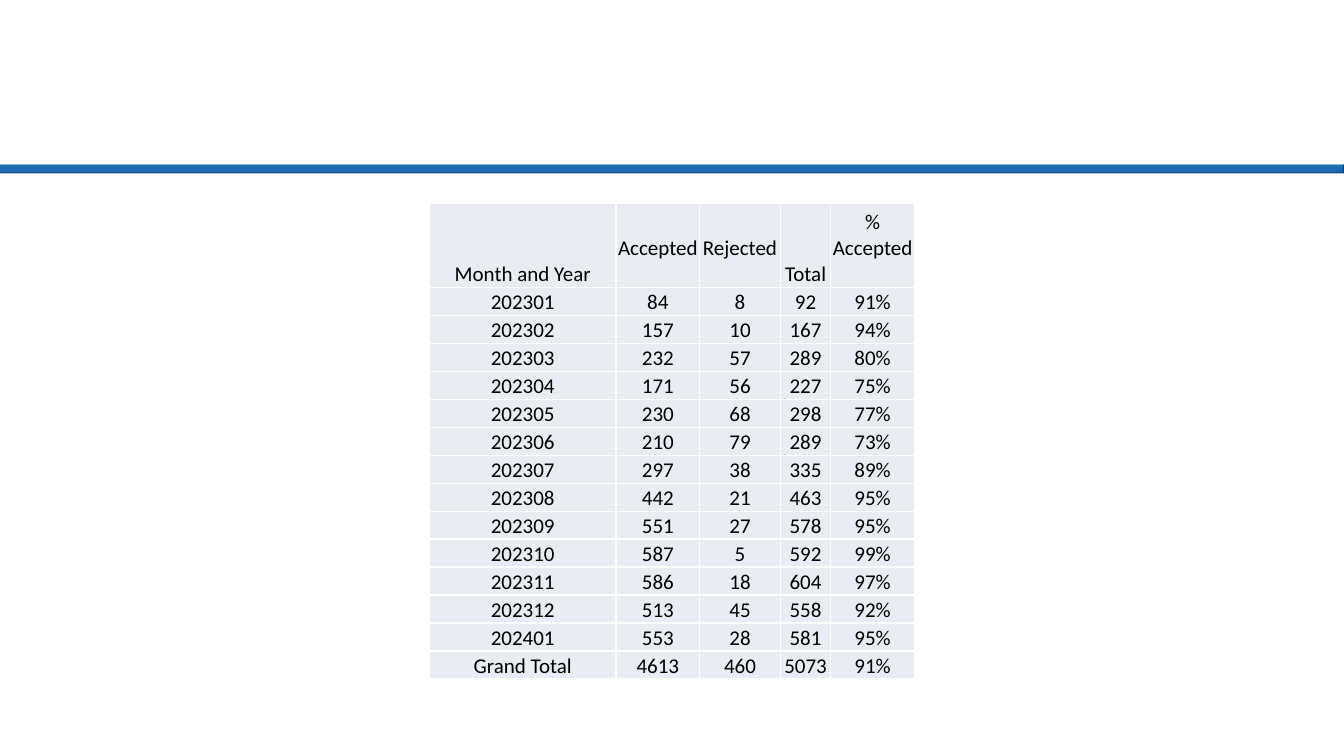
from dataclasses import dataclass

from lxml.etree import SubElement
from pptx import Presentation
from pptx.dml.color import RGBColor
from pptx.enum.shapes import MSO_SHAPE as SHAPE
from pptx.enum.text import MSO_ANCHOR as ANCHOR, PP_ALIGN as ALIGN
from pptx.oxml.ns import qn
from pptx.util import Inches, Pt


@dataclass(frozen=True)
class Theme:
    font: str = "Calibri"
    size: int = 15
    text: str = "000000"
    bar: str = "1B69B0"
    cell: str = "E9EBF5"
    border: str = "FFFFFF"
    border_width: int = 1


HEADERS = ["Month and Year", "Accepted", "Rejected", "Total", "% Accepted"]
RAISED_HEADERS = {"Accepted", "Rejected", "% Accepted"}
COL_WIDTHS = [1.85, 0.83, 0.8, 0.5, 0.83]
TABLE_HEIGHT = 4.72
HEADER_HEIGHT = 0.83
LINE_HEIGHT = 0.26
ROWS = [
    ("202301", 84, 8, 92, "91%"),
    ("202302", 157, 10, 167, "94%"),
    ("202303", 232, 57, 289, "80%"),
    ("202304", 171, 56, 227, "75%"),
    ("202305", 230, 68, 298, "77%"),
    ("202306", 210, 79, 289, "73%"),
    ("202307", 297, 38, 335, "89%"),
    ("202308", 442, 21, 463, "95%"),
    ("202309", 551, 27, 578, "95%"),
    ("202310", 587, 5, 592, "99%"),
    ("202311", 586, 18, 604, "97%"),
    ("202312", 513, 45, 558, "92%"),
    ("202401", 553, 28, 581, "95%"),
    ("Grand Total", 4613, 460, 5073, "91%"),
]


class SlideBuilder:
    """Adds styled elements to one slide."""

    def __init__(self, slide, theme):
        self.slide = slide
        self.theme = theme

    def bar(self, left, top, width, height):
        sp = self.slide.shapes.add_shape(
            SHAPE.BEVEL, Inches(left), Inches(top), Inches(width), Inches(height))
        sp.shadow.inherit = False
        sp.fill.solid()
        sp.fill.fore_color.rgb = RGBColor.from_string(self.theme.bar)
        sp.line.fill.background()

    def table(self, left, top, height, widths, header_height, rows):
        frame = self.slide.shapes.add_table(
            len(rows), len(widths), Inches(left), Inches(top),
            Inches(sum(widths)), Inches(height))
        table = frame.table
        table.first_row = table.horz_banding = False
        for column, width in zip(table.columns, widths):
            column.width = Inches(width)
        row_height = (height - header_height) / (len(rows) - 1)
        for i, (row, values) in enumerate(zip(table.rows, rows)):
            row.height = Inches(row_height if i else header_height)
            for cell, value in zip(row.cells, values):
                self.cell(cell, str(value))

    def cell(self, cell, text):
        cell.text = text
        cell.vertical_anchor = ANCHOR.BOTTOM
        cell.margin_left = cell.margin_right = cell.margin_top = Inches(0.01)
        cell.margin_bottom = Inches(LINE_HEIGHT if text in RAISED_HEADERS else 0)
        p = cell.text_frame.paragraphs[0]
        p.alignment = ALIGN.CENTER
        p.font.name = self.theme.font
        p.font.size = Pt(self.theme.size)
        p.font.bold = False
        p.font.color.rgb = RGBColor.from_string(self.theme.text)
        self.borders(cell)
        cell.fill.solid()
        cell.fill.fore_color.rgb = RGBColor.from_string(self.theme.cell)

    def borders(self, cell):
        props = cell._tc.get_or_add_tcPr()
        for side in ("lnL", "lnR", "lnT", "lnB"):
            line = SubElement(props, qn(f"a:{side}"), w=str(Pt(self.theme.border_width)))
            fill = SubElement(line, qn("a:solidFill"))
            SubElement(fill, qn("a:srgbClr"), val=self.theme.border)


def main():
    prs = Presentation()
    prs.slide_width = Inches(13.33)
    prs.slide_height = Inches(7.5)
    s = SlideBuilder(prs.slides.add_slide(prs.slide_layouts[6]), Theme())
    s.bar(-0.03, 1.63, 13.36, 0.09)
    s.table(4.26, 2.02, TABLE_HEIGHT, COL_WIDTHS, HEADER_HEIGHT, [HEADERS, *ROWS])
    prs.save("out.pptx")


if __name__ == "__main__":
    main()
